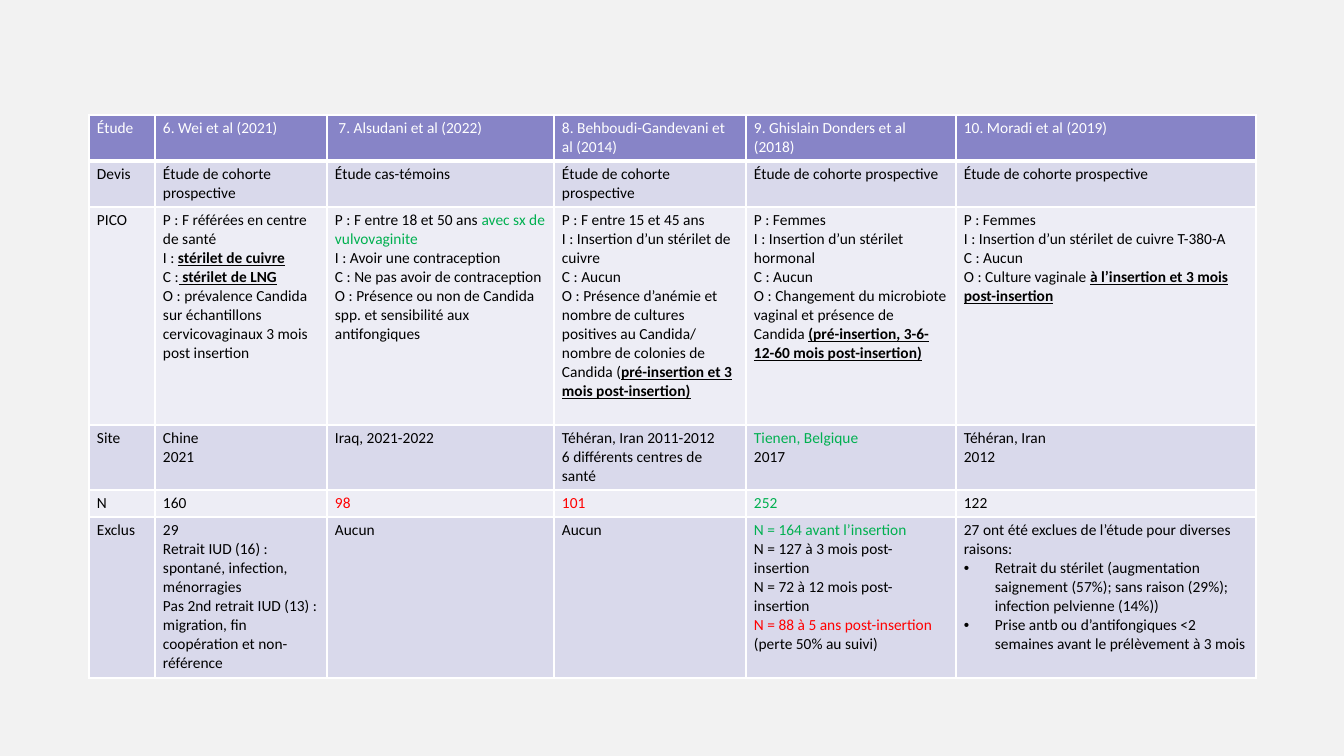
from lxml.etree import SubElement
from pptx import Presentation
from pptx.dml.color import RGBColor
from pptx.oxml.ns import qn
from pptx.util import Pt

COLORS = {
    "background": "F2F2F2", "header": "8784C7", "dark band": "D9D9EB",
    "light band": "EDEDF5", "white": "FFFFFF", "black": "000000",
    "green": "00B050", "red": "FF0000",
}
FONT, FONT_SIZE = "Calibri", 11

# A cell is one paragraph or a list of them; a paragraph is one run or a list
# of them; a run is plain text or (text, style).
COHORT = "Étude de cohorte prospective"
ROWS = [
    ["Étude", "6. Wei et al (2021)", " 7. Alsudani et al (2022)",
     "8. Behboudi-Gandevani et al (2014)", "9. Ghislain Donders et al (2018)",
     "10. Moradi et al (2019)"],
    ["Devis", COHORT, "Étude cas-témoins", COHORT, COHORT, COHORT],
    ["PICO",
     ["P : F référées en centre de santé",
      ["I : ", ("stérilet de cuivre", "strong")],
      ["C :", (" stérilet de LNG", "strong")],
      "O : prévalence Candida sur échantillons cervicovaginaux 3 mois post insertion"],
     [["P : F entre 18 et 50 ans ", ("avec sx de vulvovaginite", "green")],
      "I : Avoir une contraception",
      "C : Ne pas avoir de contraception",
      "O : Présence ou non de Candida spp. et sensibilité aux antifongiques"],
     ["P : F entre 15 et 45 ans",
      "I : Insertion d’un stérilet de cuivre",
      "C : Aucun",
      ["O : Présence d’anémie et nombre de cultures positives au Candida/ "
       "nombre de colonies de Candida (",
       ("pré-insertion et 3 mois post-insertion)", "strong")]],
     ["P : Femmes",
      "I : Insertion d’un stérilet hormonal",
      "C : Aucun",
      ["O : Changement du microbiote vaginal et présence de Candida ",
       ("(pré-insertion, 3-6-12-60 mois post-insertion)", "strong")]],
     ["P : Femmes",
      "I : Insertion d’un stérilet de cuivre T-380-A",
      "C : Aucun",
      ["O : Culture vaginale ",
       ("à l’insertion et 3 mois post-insertion", "strong")]]],
    ["Site", ["Chine", "2021"], "Iraq, 2021-2022",
     ["Téhéran, Iran 2011-2012", "6 différents centres de santé"],
     [("Tienen, Belgique", "green"), "2017"],
     ["Téhéran, Iran", "2012"]],
    ["N", "160", ("98", "red"), ("101", "red"), ("252", "green"), "122"],
    ["Exclus",
     ["29",
      "Retrait IUD (16) : spontané, infection, ménorragies",
      "Pas 2nd retrait IUD (13) : migration, fin coopération et non-référence"],
     "Aucun", "Aucun",
     [("N = 164 avant l’insertion", "green"),
      "N = 127 à 3 mois post-insertion",
      "N = 72 à 12 mois post-insertion",
      ("N = 88 à 5 ans post-insertion", "red"),
      "(perte 50% au suivi)"],
     ["27 ont été exclues de l’étude pour diverses raisons:",
      ("Retrait du stérilet (augmentation saignement (57%); sans raison (29%); "
       "infection pelvienne (14%))", "bullet"),
      ("Prise antb ou d’antifongiques <2 semaines avant le prélèvement à 3 mois",
       "bullet")]],
]

# Lengths in px
SLIDE_SIZE = (1344, 756)
TABLE_LEFT, TABLE_TOP = 89, 115
COLUMN_WIDTHS = [66, 172, 227, 192, 210, 300]
ROW_HEIGHTS = [46, 46, 218, 65, 27, 161]
MARGIN_X, MARGIN_Y = 8, 4
BULLET_INDENT = 31


def px(length):
    return round(length * 914400 / 100.8)


def color(name):
    return RGBColor.from_string(COLORS[name])


def as_list(item):
    return item if isinstance(item, list) else [item]


def add_bullet(paragraph):
    properties = paragraph._p.get_or_add_pPr()
    properties.set("marL", str(px(BULLET_INDENT)))
    properties.set("indent", str(-px(BULLET_INDENT)))
    SubElement(properties, qn("a:buFont"), typeface="Arial")
    SubElement(properties, qn("a:buChar"), char="•")


def add_run(paragraph, content, base_color):
    text, style = content if isinstance(content, tuple) else (content, None)
    if style == "bullet":
        add_bullet(paragraph)
    run = paragraph.add_run()
    run.text = text
    font = run.font
    font.name, font.size = FONT, Pt(FONT_SIZE)
    font.bold = font.underline = style == "strong"
    font.color.rgb = color(style if style in COLORS else base_color)


def set_borders(cell, top, bottom):
    """Draw white borders, with top and bottom widths in points."""
    properties = cell._tc.get_or_add_tcPr()
    widths = {"a:lnL": 1, "a:lnR": 1, "a:lnT": top, "a:lnB": bottom}
    for tag, width in widths.items():
        line = SubElement(properties, qn(tag), w=str(Pt(width)))
        fill = SubElement(line, qn("a:solidFill"))
        SubElement(fill, qn("a:srgbClr"), val=COLORS["white"])


def fill_cell(cell, content, row_index):
    is_header = row_index == 0
    cell.margin_left = cell.margin_right = px(MARGIN_X)
    cell.margin_top = cell.margin_bottom = px(MARGIN_Y)
    set_borders(cell, 3 if row_index == 1 else 1, 3 if is_header else 1)
    band = "dark band" if row_index % 2 else "light band"
    cell.fill.solid()
    cell.fill.fore_color.rgb = color("header" if is_header else band)
    frame = cell.text_frame
    for index, runs in enumerate(as_list(content)):
        paragraph = frame.add_paragraph() if index else frame.paragraphs[0]
        for run in as_list(runs):
            add_run(paragraph, run, "white" if is_header else "black")


def main():
    presentation = Presentation()
    presentation.slide_width, presentation.slide_height = map(px, SLIDE_SIZE)
    slide = presentation.slides.add_slide(presentation.slide_layouts[6])
    slide.background.fill.solid()
    slide.background.fill.fore_color.rgb = color("background")

    table = slide.shapes.add_table(
        len(ROWS), len(COLUMN_WIDTHS), px(TABLE_LEFT), px(TABLE_TOP),
        px(sum(COLUMN_WIDTHS)), px(sum(ROW_HEIGHTS))).table
    for column, width in zip(table.columns, COLUMN_WIDTHS):
        column.width = px(width)
    for row_index, (row, height) in enumerate(zip(table.rows, ROW_HEIGHTS)):
        row.height = px(height)
        for cell, content in zip(row.cells, ROWS[row_index]):
            fill_cell(cell, content, row_index)
    presentation.save("out.pptx")


if __name__ == "__main__":
    main()
